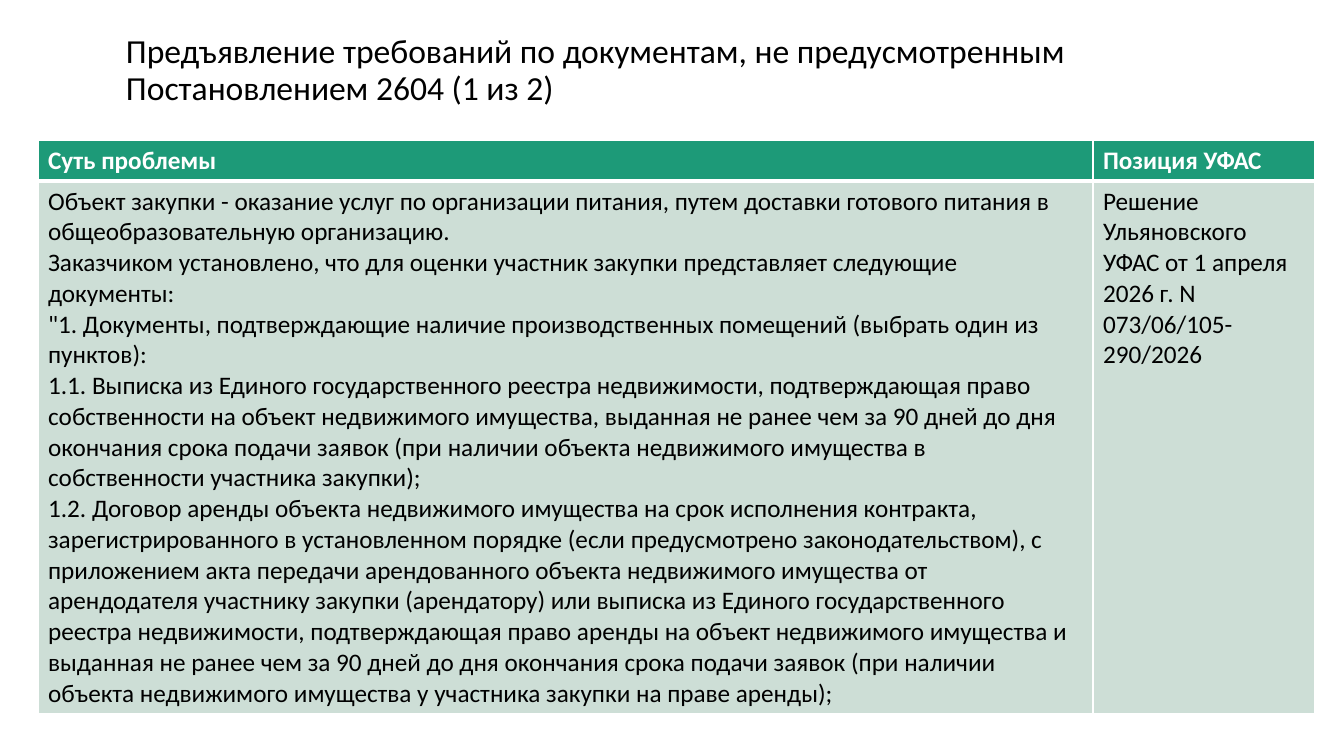
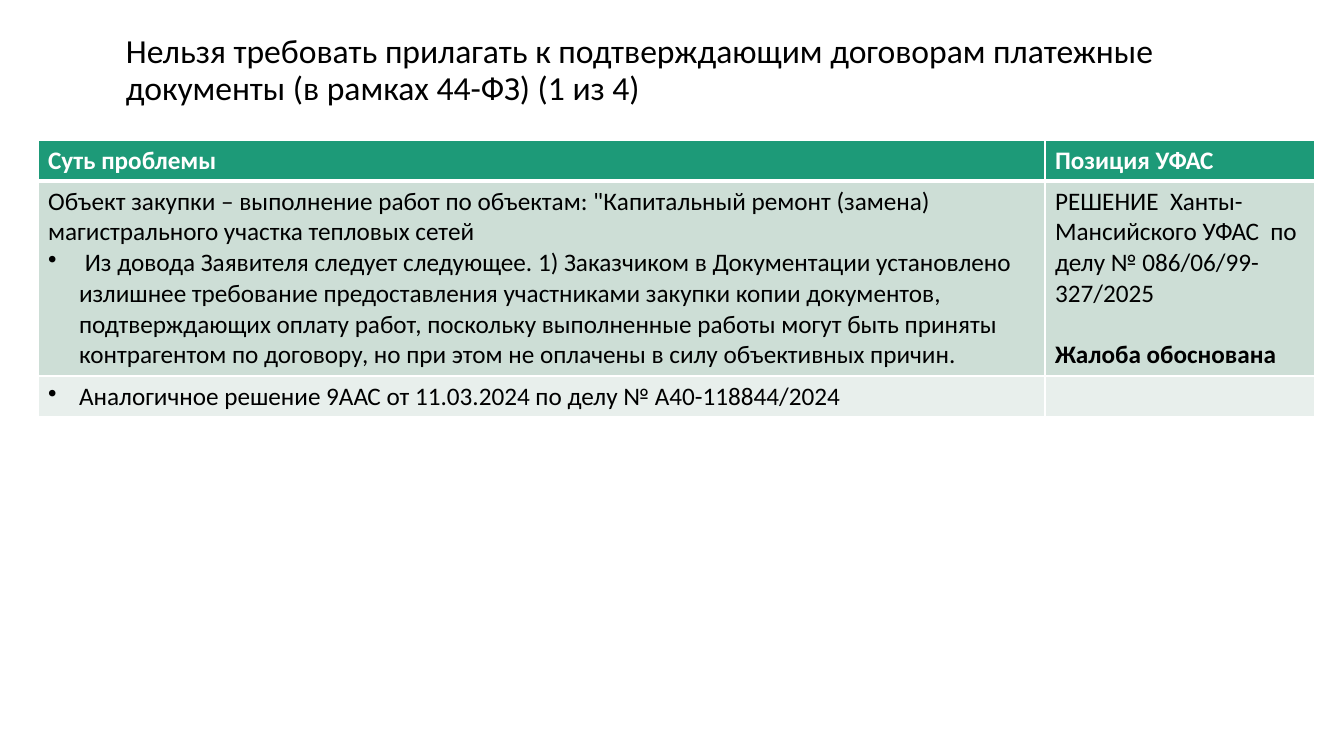
import pptx
import pptx.dml.color
import pptx.enum.text
import pptx.oxml
import pptx.oxml.ns
import pptx.util
from dataclasses import dataclass

SLIDE_W, SLIDE_H = 1344, 756
EMU_PER_PX = 12192000 / SLIDE_W

FONT = "Calibri"
COLORS = {
    "text": "000000",
    "header_text": "FFFFFF",
    "border": "FFFFFF",
    "header": "1D9A78",
    "band_dark": "CDDED6",
    "band_light": "E8EFEC",
}
TITLE_BOX = (116, 29, 1159, 84)
TABLE_LEFT, TABLE_TOP = 38, 140
HEADER_H = 41
BULLET_INDENT = 31
HEADINGS = ("Суть проблемы", "Позиция УФАС")


@dataclass
class Para:
    text: str
    bullet: bool = False
    bold: bool = False
    before: int = 0


def px(length):
    return pptx.util.Emu(round(length * EMU_PER_PX))


def rgb(color):
    return pptx.dml.color.RGBColor.from_string(COLORS[color])


def add_run(paragraph, text, size, color, bold=False):
    run = paragraph.add_run()
    run.text = text
    run.font.name = FONT
    run.font.size = pptx.util.Pt(size)
    run.font.bold = bold
    run.font.color.rgb = rgb(color)


def add_bullet(paragraph):
    properties = paragraph._p.get_or_add_pPr()
    properties.set("marL", str(px(BULLET_INDENT)))
    properties.set("indent", str(-px(BULLET_INDENT)))
    properties.append(pptx.oxml.parse_xml(
        f'<a:buChar {pptx.oxml.ns.nsdecls("a")} char="•"/>'))


def add_title(slide, box, text):
    frame = slide.shapes.add_textbox(*map(px, box)).text_frame
    frame.word_wrap = True
    frame.vertical_anchor = pptx.enum.text.MSO_ANCHOR.MIDDLE
    paragraph = frame.paragraphs[0]
    paragraph.line_spacing = 0.9
    add_run(paragraph, text, 24, "text")


def set_borders(cell, top, bottom):
    """Border widths are in points; the sides are always 1."""
    properties = cell._tc.get_or_add_tcPr()
    for side, width in (("L", 1), ("R", 1), ("T", top), ("B", bottom)):
        properties.append(pptx.oxml.parse_xml(
            f'<a:ln{side} {pptx.oxml.ns.nsdecls("a")} w="{pptx.util.Pt(width)}">'
            f'<a:solidFill><a:srgbClr val="{COLORS["border"]}"/></a:solidFill>'
            f'</a:ln{side}>'))


def fill_cell(cell, paras, color):
    frame = cell.text_frame
    for index, para in enumerate(paras):
        paragraph = frame.add_paragraph() if index else frame.paragraphs[0]
        if para.bullet:
            add_bullet(paragraph)
        if para.before:
            paragraph.space_before = pptx.util.Pt(para.before)
        add_run(paragraph, para.text, 18, color, para.bold)


def add_case_table(slide, left, top, col_widths, row_heights, cases):
    headings = [[Para(heading, bold=True)] for heading in HEADINGS]
    rows = [headings, *cases]
    heights = [HEADER_H, *row_heights]
    table = slide.shapes.add_table(
        len(rows), len(col_widths), px(left), px(top),
        px(sum(col_widths)), px(sum(heights))).table
    table.horz_banding = False
    for column, width in zip(table.columns, col_widths):
        column.width = px(width)
    for r, (row, height) in enumerate(zip(rows, heights)):
        table.rows[r].height = px(height)
        band = "header" if r == 0 else "band_dark" if r % 2 else "band_light"
        for c, paras in enumerate(row):
            cell = table.cell(r, c)
            # The rule under the header row is thicker
            set_borders(cell, top=3 if r == 1 else 1, bottom=3 if r == 0 else 1)
            cell.fill.solid()
            cell.fill.fore_color.rgb = rgb(band)
            fill_cell(cell, paras, "text" if r else "header_text")


def add_case_slide(deck, title, col_widths, row_heights, cases):
    slide = deck.slides.add_slide(deck.slide_layouts[6])
    add_title(slide, TITLE_BOX, title)
    add_case_table(slide, TABLE_LEFT, TABLE_TOP, col_widths, row_heights, cases)


# Slide 1: documents beyond the regulation
PREMISES_PROBLEM = [
    Para("Объект закупки - оказание услуг по организации питания, путем доставки "
         "готового питания в общеобразовательную организацию."),
    Para("Заказчиком установлено, что для оценки участник закупки представляет "
         "следующие документы:"),
    Para('"1. Документы, подтверждающие наличие производственных помещений '
         "(выбрать один из пунктов):"),
    Para("1.1. Выписка из Единого государственного реестра недвижимости, "
         "подтверждающая право собственности на объект недвижимого имущества, "
         "выданная не ранее чем за 90 дней до дня окончания срока подачи заявок "
         "(при наличии объекта недвижимого имущества в собственности участника "
         "закупки);"),
    Para("1.2. Договор аренды объекта недвижимого имущества на срок исполнения "
         "контракта, зарегистрированного в установленном порядке (если "
         "предусмотрено законодательством), с приложением акта передачи "
         "арендованного объекта недвижимого имущества от арендодателя участнику "
         "закупки (арендатору) или выписка из Единого государственного реестра "
         "недвижимости, подтверждающая право аренды на объект недвижимого "
         "имущества и выданная не ранее чем за 90 дней до дня окончания срока "
         "подачи заявок (при наличии объекта недвижимого имущества у участника "
         "закупки на праве аренды);"),
]
PREMISES_RULING = [
    Para("Решение Ульяновского УФАС от 1 апреля 2026 г. N 073/06/105-290/2026"),
]

# Slide 2: payment documents
PAYMENT_PROBLEM = [
    Para('Объект закупки – выполнение работ по объектам: "Капитальный ремонт '
         "(замена) магистрального участка тепловых сетей"),
    Para(" Из довода Заявителя следует следующее. 1) Заказчиком в Документации "
         "установлено излишнее требование предоставления участниками закупки "
         "копии документов, подтверждающих оплату работ, поскольку выполненные "
         "работы могут быть приняты контрагентом по договору, но при этом не "
         "оплачены в силу объективных причин.", bullet=True),
]
PAYMENT_RULING = [
    Para("РЕШЕНИЕ  Ханты-Мансийского УФАС  по делу № 086/06/99-327/2025"),
    Para("Жалоба обоснована", bold=True, before=22),
]
SIMILAR_RULING = [
    Para("Аналогичное решение 9ААС от 11.03.2024 по делу № А40-118844/2024",
         bullet=True),
]


def main():
    deck = pptx.Presentation()
    deck.slide_width, deck.slide_height = px(SLIDE_W), px(SLIDE_H)
    add_case_slide(
        deck,
        "Предъявление требований по документам, не предусмотренным "
        "Постановлением 2604 (1 из 2)",
        (1055, 222), (533,), [(PREMISES_PROBLEM, PREMISES_RULING)])
    add_case_slide(
        deck,
        "Нельзя требовать прилагать к подтверждающим договорам платежные "
        "документы (в рамках 44-ФЗ) (1 из 4)",
        (1007, 270), (195, 41),
        [(PAYMENT_PROBLEM, PAYMENT_RULING), (SIMILAR_RULING, [])])
    deck.save("out.pptx")


if __name__ == "__main__":
    main()
